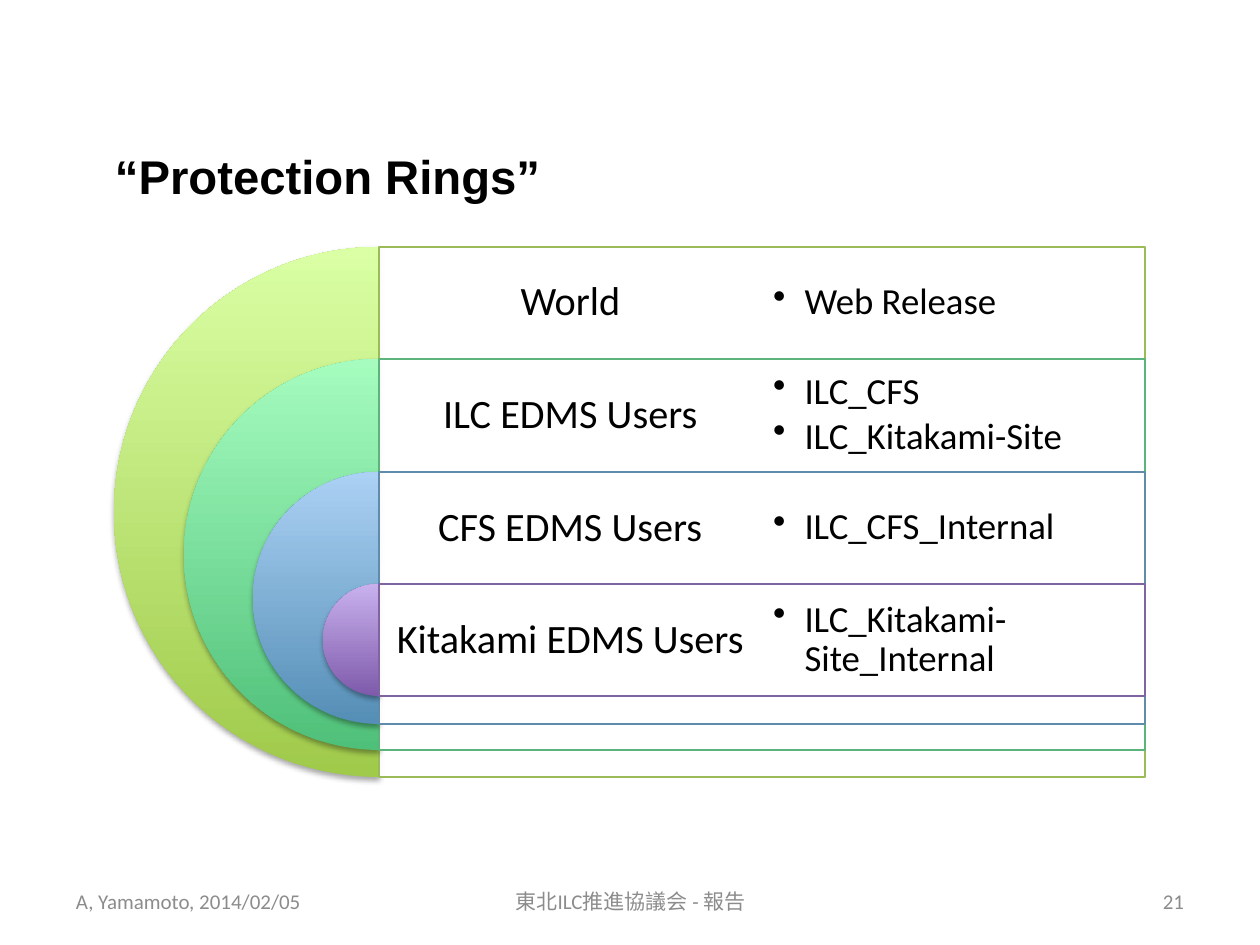
import dataclasses
import typing

import lxml.etree
import pptx
import pptx.dml.color
import pptx.enum.shapes
import pptx.enum.text
import pptx.oxml
import pptx.oxml.ns
import pptx.util

EMU_PER_PX = 914400 / 126
ALIGN = pptx.enum.text.PP_ALIGN
SHAPE = pptx.enum.shapes.MSO_SHAPE
NS = 'xmlns:a="http://schemas.openxmlformats.org/drawingml/2006/main"'

CENTER_X = 379
PANEL_W = 766
COLUMN_W = PANEL_W // 2
ROW_H = 112


@dataclasses.dataclass
class Ring:
    name: str
    areas: list[str]
    top: int
    diameter: int
    dark: str
    light: str
    line: str


@dataclasses.dataclass
class Label:
    text: str
    box: tuple[int, int, int, int]
    inset: tuple[int, int]
    size: int
    color: str
    align: typing.Any = ALIGN.LEFT
    font: str = "Calibri"
    bold: bool = False


RINGS = [
    Ring("World", ["Web Release"], 247, 530, "A0CA4A", "DAFFA5", "9BBB59"),
    Ring("ILC EDMS Users", ["ILC_CFS", "ILC_Kitakami-Site"],
         359, 391, "4FC079", "A5FCBE", "5CB37C"),
    Ring("CFS EDMS Users", ["ILC_CFS_Internal"],
         472, 252, "558EB6", "ABD1F4", "608CAB"),
    Ring("Kitakami EDMS Users", ["ILC_Kitakami-Site_Internal"],
         584, 112, "7F5BAB", "C8B0ED", "8064A2"),
]

LABELS = [
    Label("“Protection Rings”", (115, 141, 1030, 70), (0, 0), 27, "000000",
          font="Arial", bold=True),
    Label("A, Yamamoto, 2014/02/05", (63, 876, 294, 50), (13, 6), 12, "8C8C8C"),
    Label("東北ILC推進協議会 - 報告", (431, 876, 399, 50), (13, 6), 12, "8C8C8C",
          ALIGN.CENTER),
    Label("21", (903, 876, 294, 50), (13, 6), 12, "8C8C8C", ALIGN.RIGHT),
]


def px(n: int) -> int:
    return pptx.util.Emu(round(n * EMU_PER_PX))


def rgb(color: str) -> pptx.dml.color.RGBColor:
    return pptx.dml.color.RGBColor.from_string(color)


def add_text_frame(slide, box: tuple[int, ...], inset: tuple[int, int]):
    """Add a wrapping, vertically centred text box and return its frame."""
    tf = slide.shapes.add_textbox(*map(px, box)).text_frame
    tf.word_wrap = True
    tf.vertical_anchor = pptx.enum.text.MSO_ANCHOR.MIDDLE
    tf.margin_left = tf.margin_right = px(inset[0])
    tf.margin_top = tf.margin_bottom = px(inset[1])
    return tf


def add_run(p, text: str, size: int, color: str, font: str = "Calibri",
            bold: bool = False) -> None:
    r = p.add_run()
    r.text = text
    r.font.size = pptx.util.Pt(size)
    r.font.name = font
    r.font.bold = bold
    r.font.color.rgb = rgb(color)


def add_label(slide, label: Label) -> None:
    p = add_text_frame(slide, label.box, label.inset).paragraphs[0]
    p.alignment = label.align
    add_run(p, label.text, label.size, label.color, label.font, label.bold)


def add_half_disc(slide, ring: Ring) -> None:
    left = CENTER_X - ring.diameter // 2
    s = slide.shapes.add_shape(SHAPE.PIE, px(left), px(ring.top),
                               px(ring.diameter), px(ring.diameter))
    s.adjustments[0], s.adjustments[1] = 54, 162
    s.fill.gradient()
    s.fill.gradient_angle = 90
    for stop, position, color in zip(s.fill.gradient_stops, (0, 1),
                                     (ring.dark, ring.light)):
        stop.position = position
        stop.color.rgb = rgb(color)
    s.line.fill.background()
    s.shadow.inherit = False
    effects = s.element.spPr.find(pptx.oxml.ns.qn("a:effectLst"))
    effects.append(pptx.oxml.parse_xml(
        f'<a:outerShdw {NS} blurRad="39370" dist="22860" dir="5400000" '
        'rotWithShape="0"><a:srgbClr val="000000"><a:alpha val="35000"/>'
        '</a:srgbClr></a:outerShdw>'))


def add_panel(slide, ring: Ring) -> None:
    s = slide.shapes.add_shape(SHAPE.RECTANGLE, px(CENTER_X), px(ring.top),
                               px(PANEL_W), px(ring.diameter))
    s.shadow.inherit = False
    s.fill.solid()
    s.fill.fore_color.rgb = rgb("FFFFFF")
    color = s.element.spPr.find(".//" + pptx.oxml.ns.qn("a:srgbClr"))
    lxml.etree.SubElement(color, pptx.oxml.ns.qn("a:alpha"), val="90000")
    s.line.color.rgb = rgb(ring.line)
    s.line.width = pptx.util.Pt(0.75)


def add_ring_name(slide, ring: Ring) -> None:
    tf = add_text_frame(slide, (CENTER_X, ring.top, COLUMN_W, ROW_H), (12, 12))
    p = tf.paragraphs[0]
    p.alignment = ALIGN.CENTER
    p.line_spacing = 0.9
    add_run(p, ring.name, 23, "000000")


def add_areas(slide, ring: Ring) -> None:
    """List the areas of a ring as bullets in the right column."""
    box = (CENTER_X + COLUMN_W, ring.top, COLUMN_W, ROW_H)
    tf = add_text_frame(slide, box, (11, 11))
    for i, area in enumerate(ring.areas):
        p = tf.add_paragraph() if i else tf.paragraphs[0]
        p.level = 1
        p.line_spacing = 0.9
        p.space_after = pptx.util.Pt(3)
        pPr = p._p.get_or_add_pPr()
        pPr.set("marL", "228600")
        pPr.set("indent", "-228600")
        lxml.etree.SubElement(pPr, pptx.oxml.ns.qn("a:buChar"), char="•")
        add_run(p, area, 21, "000000")


def main() -> None:
    prs = pptx.Presentation()
    prs.slide_width, prs.slide_height = px(1260), px(945)
    slide = prs.slides.add_slide(prs.slide_layouts[6])
    for ring in RINGS:
        add_half_disc(slide, ring)
        add_panel(slide, ring)
        add_ring_name(slide, ring)
    for ring in RINGS:
        add_areas(slide, ring)
    for label in LABELS:
        add_label(slide, label)
    prs.save("out.pptx")


if __name__ == "__main__":
    main()
